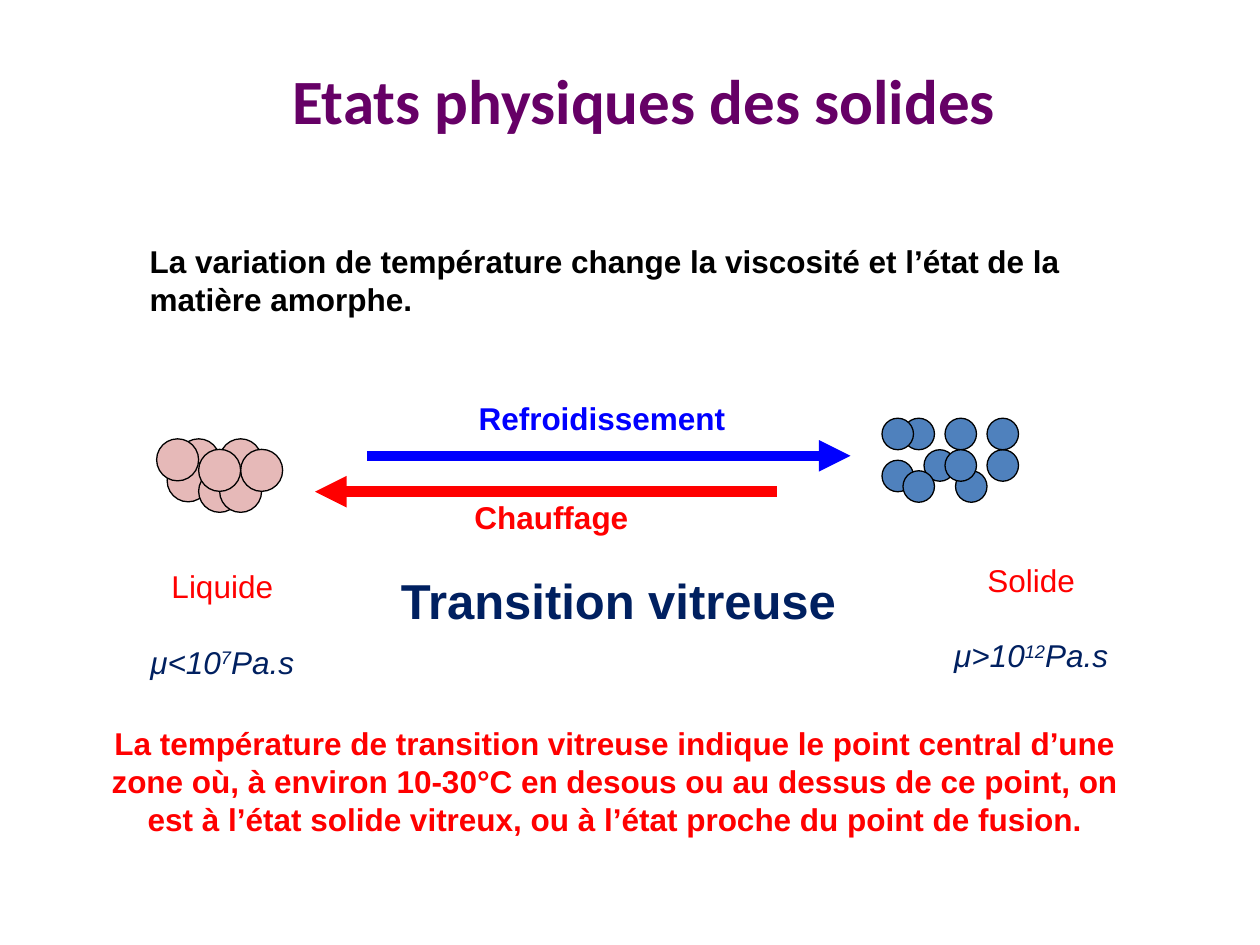
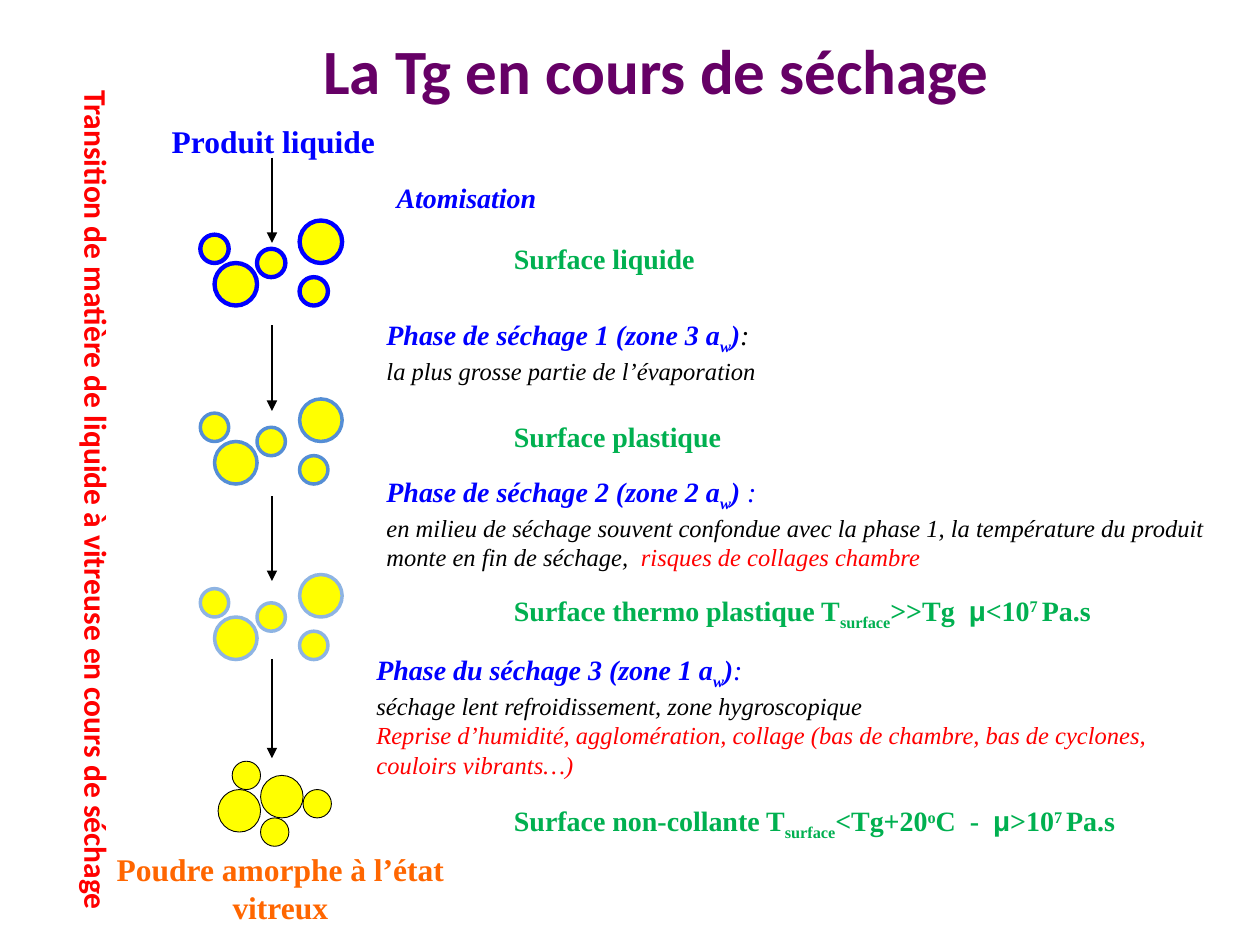
"""Build two slides on physical states of solids and the glass transition during drying."""
from lxml import etree
from pptx import Presentation
from pptx import util as u
from pptx.dml.color import RGBColor
from pptx.enum import shapes, text
from pptx.oxml import ns

Pt = u.Pt
COLORS = {
    "title": "660066", "black": "000000", "blue": "0000FF", "red": "FF0000",
    "navy": "002060", "green": "00B050", "orange": "FF6600", "pink": "E6B9B8",
    "steel": "4F81BD", "yellow": "FFFF00", "moist": "558ED5", "dry": "8EB4E3",
}
CENTER = text.PP_ALIGN.CENTER
MIDDLE = text.MSO_ANCHOR.MIDDLE

TITLE = {"name": "Calibri", "size": Pt(36), "bold": True, "color": "title"}
LABEL = {"name": "Arial", "size": Pt(18), "color": "red"}
STRONG = {**LABEL, "bold": True}
VISCOSITY = {"color": "navy", "italic": True}
STAGE = {"name": "Times New Roman", "size": Pt(18), "bold": True, "color": "blue"}
SURFACE = {**STAGE, "size": Pt(16), "color": "green"}
PHASE = {**STAGE, "size": Pt(16), "italic": True}
DETAIL = {"size": Pt(14), "bold": False, "color": "black"}
RISK = {**DETAIL, "color": "red"}
SUP = {"baseline": 30}
SUB = {"baseline": -25}
ARIAL = {"name": "Arial"}
PLAIN = {"bold": False}


def rgb(color):
    return RGBColor.from_string(COLORS[color])


def write(slide, box, style, *paragraphs, align=None, anchor=None, gap=0, vert=None):
    frame = slide.shapes.add_textbox(*map(Pt, box)).text_frame
    frame.word_wrap = True
    frame.vertical_anchor = anchor
    if vert:
        frame._txBody.bodyPr.set("vert", vert)
    for index, runs in enumerate(paragraphs):
        paragraph = frame.add_paragraph() if index else frame.paragraphs[0]
        paragraph.alignment = align
        if index and gap:
            paragraph.space_before = Pt(gap)
        for words, changes in runs:
            run = paragraph.add_run()
            run.text = words
            for key, value in {**style, **changes}.items():
                if key == "color":
                    run.font.color.rgb = rgb(value)
                elif key == "baseline":
                    run._r.get_or_add_rPr().set("baseline", str(value * 1000))
                else:
                    setattr(run.font, key, value)


deck = Presentation()
deck.slide_width, deck.slide_height = Pt(720), Pt(540)
states, drying = [deck.slides.add_slide(deck.slide_layouts[6]) for _ in range(2)]

liquid = [(c, r, 4) for c, r in
          [(2, 0), (1, 2), (6, 2), (6, 0), (0, 0), (4, 3), (6, 3), (8, 1), (4, 1)]]
solid = [(c, r, 3) for c, r in
         [(2, 0), (10, 3), (0, 4), (7, 5), (6, 0), (0, 0), (4, 3), (6, 3), (10, 0), (2, 5)]]
droplets = [(0, 1, 2), (7, 0, 3), (4, 2, 2), (7, 4, 2), (1, 3, 3)]
powder = [(1, 0, 2), (3, 1, 3), (3, 4, 2), (6, 2, 2), (0, 2, 3)]

clusters = [
    (states, 89.5, 250.75, 6, liquid, "pink", "black", 0.75),
    (states, 504, 239, 6, solid, "steel", "black", 0.75),
    (drying, 114.5, 126, 8.1, droplets, "yellow", "blue", 2.5),
    (drying, 114.5, 228, 8.1, droplets, "yellow", "moist", 2),
    (drying, 114.5, 328.3, 8.1, droplets, "yellow", "dry", 2),
    (drying, 124.6, 435, 8.1, powder, "yellow", "black", 0.5),
]
for slide, left, top, step, particles, fill, outline, weight in clusters:
    cluster = slide.shapes.add_group_shape()
    for column, row, size in particles:
        particle = cluster.shapes.add_shape(
            shapes.MSO_SHAPE.OVAL, Pt(left + column * step), Pt(top + row * step),
            Pt(size * step), Pt(size * step))
        particle.shadow.inherit = False
        particle.fill.solid()
        particle.fill.fore_color.rgb = rgb(fill)
        particle.line.color.rgb = rgb(outline)
        particle.line.width = Pt(weight)

arrows = [
    (states, (210, 260.5, 486, 260.5), "blue", 6),
    (states, (444, 281, 180, 281), "red", 6),
]
for start, end in [(90, 138.8), (186, 234.8), (283.5, 332), (376.5, 433.3)]:
    arrows.append((drying, (155.4, start, 155.4, end), "black", 1))
for slide, ends, color, weight in arrows:
    arrow = slide.shapes.add_connector(shapes.MSO_CONNECTOR.STRAIGHT, *map(Pt, ends))
    arrow.line.color.rgb = rgb(color)
    arrow.line.width = Pt(weight)
    etree.SubElement(arrow.line._get_or_add_ln(), ns.qn("a:tailEnd"), type="triangle")
    etree.SubElement(arrow._element.spPr, ns.qn("a:effectLst"))

for slide, box, heading in [
    (states, (62, 11.5, 612, 90), "Etats physiques des solides"),
    (drying, (30, 11.5, 690, 56), "La Tg en cours de séchage"),
]:
    write(slide, box, TITLE, [(heading, {})], align=CENTER, anchor=MIDDLE)

for box, changes, align, words in [
    ((78.5, 134.6, 562, 51), {"color": "black"}, None,
     "La variation de température change la viscosité et l’état de la matière amorphe."),
    ((236, 224.6, 216, 29), {"color": "blue"}, CENTER, "Refroidissement"),
    ((264, 281, 132, 36), {}, None, "Chauffage"),
    ((222, 322.6, 280, 41), {"color": "navy", "size": Pt(28)}, None, "Transition vitreuse"),
    ((50.4, 410.4, 602, 73), {}, CENTER,
     "La température de transition vitreuse indique le point central d’une zone où, "
     "à environ 10-30°C en desous ou au dessus de ce point, on est à l’état solide "
     "vitreux, ou à l’état proche du point de fusion."),
]:
    write(states, box, STRONG, [(words, changes)], align=align)

for box, state, limit, power in [
    ((67, 320.4, 120, 73), "Liquide", "μ<10", "7"),
    ((522, 316.8, 134.6, 94), "Solide", "μ>10", "12"),
]:
    write(states, box, LABEL, [(state, {})],
          [(limit, VISCOSITY), (power, {**VISCOSITY, **SUP}), ("Pa.s", VISCOSITY)],
          align=CENTER, gap=21.6)

for box, style, align, words in [
    ((78.5, 66.2, 155.5, 24.5), STAGE, CENTER, "Produit liquide"),
    ((219.6, 99.4, 343.4, 24.5), PHASE, None, "Atomisation"),
    ((286.6, 134.6, 166.3, 24.5), SURFACE, None, "Surface liquide"),
    ((286.6, 236.2, 236.2, 21.6), SURFACE, None, "Surface plastique"),
    ((56.2, 482.4, 208, 40.3), {**STAGE, "color": "orange"}, CENTER,
     "Poudre amorphe à l’état vitreux"),
]:
    write(drying, box, style, [(words, {})], align=align)

for box, name, close, colon, details in [
    ((213.8, 177.8, 472.3, 30.2), "Phase de séchage 1 (zone 3 a", ")", {"color": "black"},
     [[("la plus grosse partie de l’évaporation", DETAIL)]]),
    ((213.8, 267.8, 506.2, 30.2), "Phase de séchage 2 (zone 2 a", ") ", {},
     [[("en milieu de séchage souvent confondue avec la phase 1, la température du "
        "produit monte en fin de séchage,  ", DETAIL),
       ("risques de collages chambre", RISK)]]),
    ((208, 369.4, 483.8, 30.2), "Phase du séchage 3 (zone 1 a", ")", {},
     [[("séchage lent refroidissement, zone hygroscopique", DETAIL)],
      [("Reprise d’humidité, agglomération, collage (bas de chambre, bas de cyclones, "
        "couloirs vibrants…)", RISK)]]),
]:
    write(drying, box, PHASE,
          [(name, {}), ("w", SUB), (close, {}), (":", {**PLAIN, **colon})], *details)

for top, name, condition, limit in [
    (335.5, "Surface thermo plastique T", [(">>Tg  ", {})], "<10"),
    (455.8, "Surface non-collante T", [("<Tg+20", {}), ("o", SUP), ("C  -  ", {})], ">10"),
]:
    write(drying, (286.6, top, 422, 30.2), SURFACE,
          [(name, {}), ("surface", SUB), *condition, ("μ", ARIAL), (limit, {}),
           ("7 ", SUP), ("Pa.s", {})])

write(drying, (33.8, 44.6, 36, 490), {**STRONG, "name": "Calibri"},
      [("Transition de matière de liquide à vitreuse en cours de séchage", {})], vert="vert")

deck.save("out.pptx")
